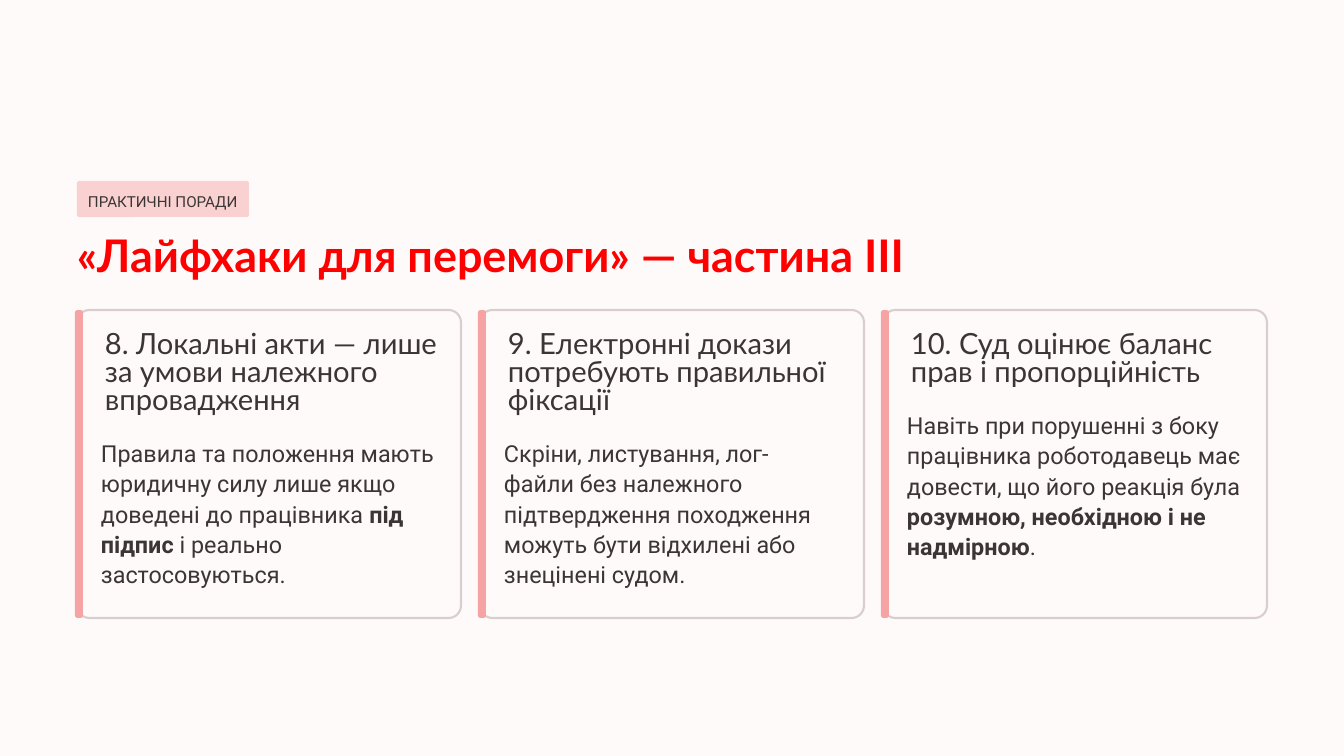
import pptx
import pptx.util
import pptx.dml.color
import pptx.enum.shapes

COLORS = {
    "background": "FFFAFA",
    "tag": "FAD1D1",
    "heading": "FF0000",
    "text": "3B3535",
    "border": "D9CECE",
    "accent": "F5A3A3",
}
CARDS = [
    ("8. Локальні акти — лише за умови належного впровадження", 3,
     [("Правила та положення мають юридичну силу лише якщо доведені до працівника ", False),
      ("під підпис", True),
      (" і реально застосовуються.", False)]),
    ("9. Електронні докази потребують правильної фіксації", 3,
     [("Скріни, листування, лог-файли без належного підтвердження походження "
       "можуть бути відхилені або знецінені судом.", False)]),
    ("10. Суд оцінює баланс прав і пропорційність", 2,
     [("Навіть при порушенні з боку працівника роботодавець має довести, "
       "що його реакція була ", False),
      ("розумною, необхідною і не надмірною", True),
      (".", False)]),
]
CARD_LEFT, CARD_TOP, CARD_PITCH = 77, 310, 403
CARD_WIDTH, CARD_HEIGHT = 384, 308
TITLE_LINE = 28


def px(length):
    return pptx.util.Emu(round(length * 914400 / 84))


def color(name):
    return pptx.dml.color.RGBColor.from_string(COLORS[name])


class TipsSlide:
    """Hold the slide and its style, and draw each kind of element."""

    def __init__(self, presentation):
        self.slide = presentation.slides.add_slide(presentation.slide_layouts[6])
        fill = self.slide.background.fill
        fill.solid()
        fill.fore_color.rgb = color("background")

    def rounded(self, left, top, width, height, fill, radius, border=None):
        shape = self.slide.shapes.add_shape(
            pptx.enum.shapes.MSO_SHAPE.ROUNDED_RECTANGLE,
            px(left), px(top), px(width), px(height))
        shape.adjustments[0] = radius
        shape.shadow.inherit = False
        shape.fill.solid()
        shape.fill.fore_color.rgb = color(fill)
        if border:
            shape.line.color.rgb = color(border)
            shape.line.width = pptx.util.Pt(1.8)
        else:
            shape.line.fill.background()

    def text(self, left, top, width, height, runs, font, size, spacing,
             ink="text", wrap=True):
        shape = self.slide.shapes.add_textbox(px(left), px(top), px(width), px(height))
        frame = shape.text_frame
        frame.margin_left = frame.margin_right = 0
        frame.margin_top = frame.margin_bottom = 0
        frame.word_wrap = wrap
        paragraph = frame.paragraphs[0]
        paragraph.line_spacing = pptx.util.Pt(spacing)
        for words, bold in runs:
            run = paragraph.add_run()
            run.text = words
            run.font.name = font
            run.font.size = pptx.util.Pt(size)
            run.font.bold = bold
            run.font.color.rgb = color(ink)

    def card(self, left, title, title_lines, body):
        self.rounded(left, CARD_TOP, CARD_WIDTH, CARD_HEIGHT,
                     "background", 0.04, "border")
        self.rounded(left - 2, CARD_TOP, 8, CARD_HEIGHT, "accent", 0.34)
        title_height = title_lines * TITLE_LINE
        self.text(left + 28, CARD_TOP + 22, 335, title_height,
                  [(title, False)], "Lato", 25, 24)
        self.text(left + 24, CARD_TOP + 43 + title_height, 335, 152,
                  body, "Roboto", 20, 26)


def main():
    presentation = pptx.Presentation()
    presentation.slide_width = px(1344)
    presentation.slide_height = px(756)
    tips = TipsSlide(presentation)
    tips.rounded(77, 181, 172, 36, "tag", 0.06)
    tips.text(88, 186, 150, 24, [("ПРАКТИЧНІ ПОРАДИ", False)],
              "Roboto", 13, 21, wrap=False)
    tips.text(77, 225, 868, 56, [("«Лайфхаки для перемоги» — частина ІІІ", True)],
              "Lato", 38.5, 48.5, "heading", wrap=False)
    for index, (title, title_lines, body) in enumerate(CARDS):
        tips.card(CARD_LEFT + index * CARD_PITCH, title, title_lines, body)
    presentation.save("out.pptx")


if __name__ == "__main__":
    main()
